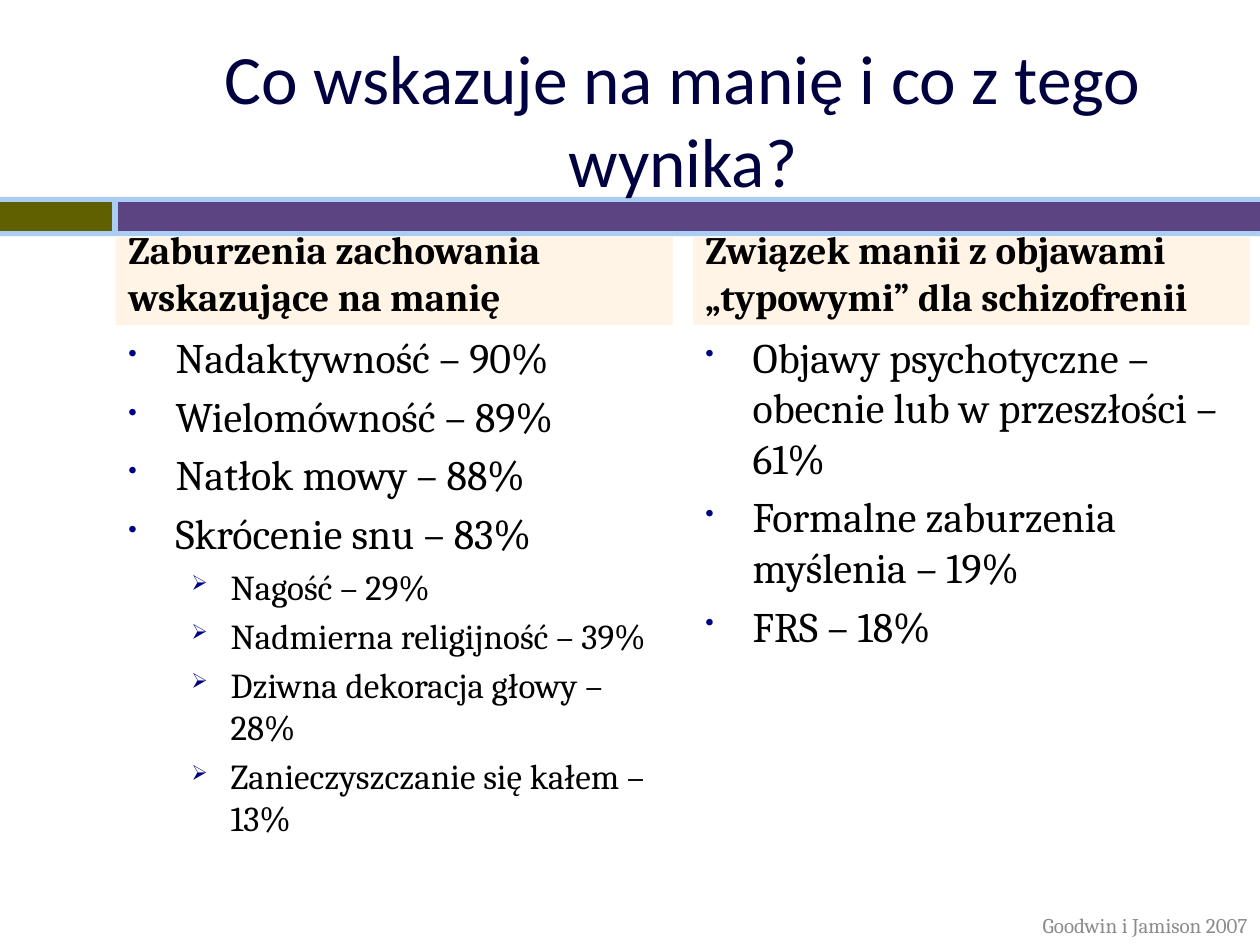
"""Builds a slide on signs of mania with two headed lists."""
from lxml.etree import SubElement
from pptx import Presentation
from pptx.dml.color import RGBColor
from pptx.enum.shapes import MSO_SHAPE
from pptx.enum.text import MSO_ANCHOR, PP_ALIGN
from pptx.oxml.ns import qn
from pptx.util import Pt

BLACK = RGBColor(0x00, 0x00, 0x00)
NAVY = RGBColor(0x00, 0x00, 0x40)
BLUE = RGBColor(0x00, 0x00, 0x82)
SKY = RGBColor(0xAB, 0xCD, 0xF4)
OLIVE = RGBColor(0x60, 0x60, 0x00)
PLUM = RGBColor(0x5C, 0x43, 0x81)
ORANGE = RGBColor(0xFF, 0x99, 0x00)
GREY = RGBColor(0x8C, 0x8C, 0x8C)

LEVELS = [("•", 24, 27, 27), ("➢", 20, 58.5, 22.5)]
COLUMNS = [
    (66.24, "Zaburzenia zachowania wskazujące na manię", [
        (0, "Nadaktywność – 90%"),
        (0, "Wielomówność – 89%"),
        (0, "Natłok mowy – 88%"),
        (0, "Skrócenie snu – 83%"),
        (1, "Nagość – 29%"),
        (1, "Nadmierna religijność – 39%"),
        (1, "Dziwna dekoracja głowy – 28%"),
        (1, "Zanieczyszczanie się kałem – 13%"),
    ]),
    (396, "Związek manii z objawami „typowymi” dla schizofrenii", [
        (0, "Objawy psychotyczne – obecnie lub w przeszłości – 61%"),
        (0, "Formalne zaburzenia myślenia – 19%"),
        (0, "FRS – 18%"),
    ]),
]


def add_bar(slide, box, color, alpha=None):
    """Add a plain filled rectangle, optionally see-through."""
    bar = slide.shapes.add_shape(MSO_SHAPE.RECTANGLE, *map(Pt, box))
    bar.shadow.inherit = False
    bar.line.fill.background()
    bar.fill.solid()
    bar.fill.fore_color.rgb = color
    if alpha:
        tint = bar.fill._xPr.find(qn("a:solidFill"))[0]
        SubElement(tint, qn("a:alpha"), val=str(alpha * 1000))
    return bar


def set_para(para, text, size, color, face="Cambria", bold=False,
             align=PP_ALIGN.LEFT):
    """Write one paragraph and its font."""
    para.text = text
    para.alignment = align
    font = para.font
    font.name, font.size, font.bold = face, Pt(size), bold
    font.color.rgb = color


def add_text(slide, box, anchor=MSO_ANCHOR.TOP):
    """Add an empty wrapping text box and return its frame."""
    frame = slide.shapes.add_textbox(*map(Pt, box)).text_frame
    frame.word_wrap = True
    frame.vertical_anchor = anchor
    return frame


def set_bullet(para, mark, size, left, hang):
    """Give a paragraph a hanging bullet and space above."""
    para.space_before = Pt(size * 0.2)
    props = para._p.get_or_add_pPr()
    props.set("marL", str(Pt(left)))
    props.set("indent", str(-Pt(hang)))
    tint = SubElement(props, qn("a:buClr"))
    SubElement(tint, qn("a:srgbClr"), val=str(BLUE))
    SubElement(props, qn("a:buSzPct"), val="60000")
    SubElement(props, qn("a:buChar"), char=mark)


def add_column(slide, left, head, items):
    """Add a tinted heading with a two-level list below."""
    frame = add_bar(slide, (left, 135.36, 318.24, 50.4), ORANGE, 10).text_frame
    frame.word_wrap = True
    frame.vertical_anchor = MSO_ANCHOR.BOTTOM
    para = frame.paragraphs[0]
    para.space_before = Pt(4.4)
    set_para(para, head, 22.2, BLACK, bold=True)

    frame = add_text(slide, (left, 185.76, 318.24, 330.48))
    for i, (level, text) in enumerate(items):
        para = frame.add_paragraph() if i else frame.paragraphs[0]
        mark, size, indent, hang = LEVELS[level]
        para.level = level
        set_bullet(para, mark, size, indent, hang)
        set_para(para, text, size, BLACK)


def main():
    """Build and save the slide."""
    deck = Presentation()
    deck.slide_width, deck.slide_height = Pt(720), Pt(540)
    slide = deck.slides.add_slide(deck.slide_layouts[6])

    add_bar(slide, (0, 112.5, 720, 22.5), SKY)
    add_bar(slide, (0, 115.5, 64, 16.5), OLIVE)
    add_bar(slide, (67.5, 115.5, 652.5, 16.5), PLUM)

    title = add_text(slide, (66.24, 22.5, 648, 90), MSO_ANCHOR.MIDDLE)
    set_para(title.paragraphs[0], "Co wskazuje na manię i co z tego wynika?",
             39.6, NAVY, "Calibri", align=PP_ALIGN.CENTER)
    for column in COLUMNS:
        add_column(slide, *column)
    source = add_text(slide, (493.2, 517.68, 226.8, 22.32), MSO_ANCHOR.MIDDLE)
    set_para(source.paragraphs[0], "Goodwin i Jamison 2007", 12, GREY,
             align=PP_ALIGN.RIGHT)
    deck.save("out.pptx")


if __name__ == "__main__":
    main()
